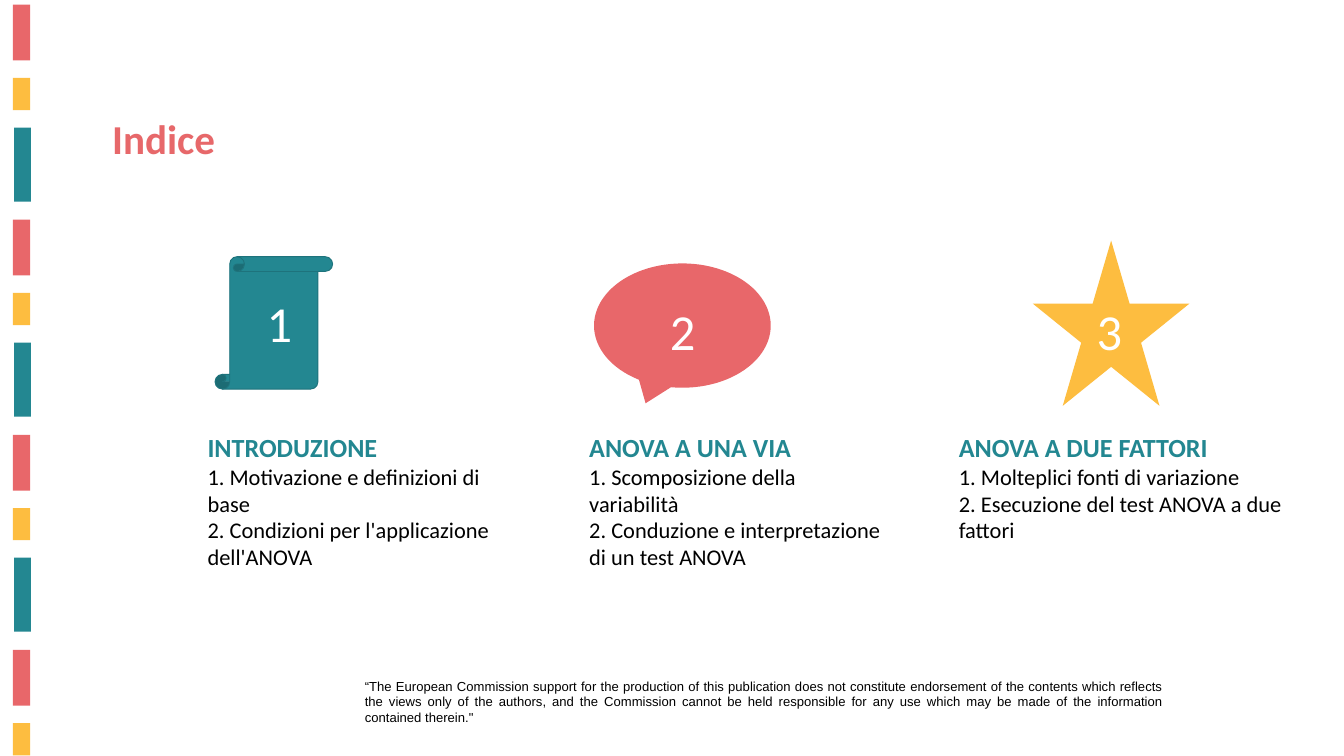
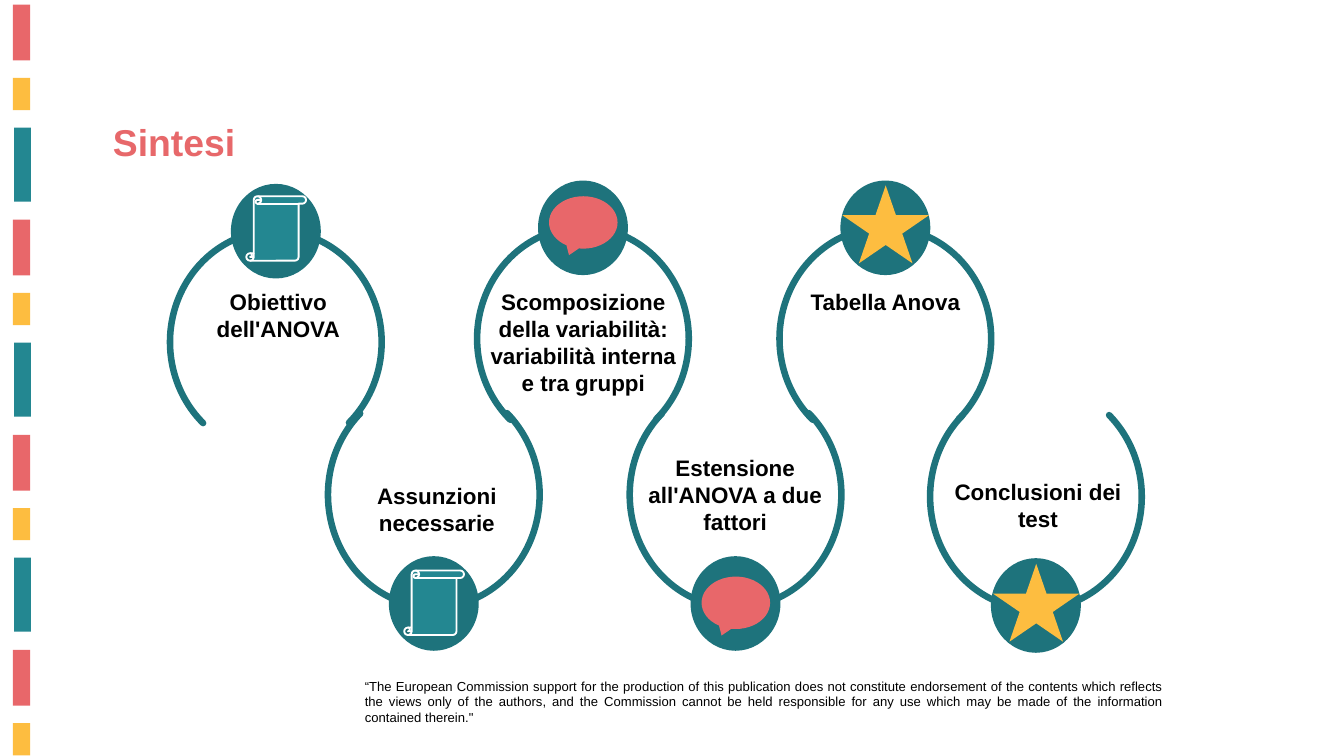
"""Builds the index and summary slides of an ANOVA lesson."""
from pptx import Presentation
from pptx.dml.color import RGBColor
from pptx.enum import shapes, text
from pptx.oxml import ns
from pptx.util import Inches, Pt

COLORS = {"coral": "E8676A", "title": "E7686A", "amber": "FDBD40", "teal": "238791",
          "dark": "1E737C", "black": "000000", "white": "FFFFFF"}
SHAPE = shapes.MSO_SHAPE
ALIGN = text.PP_ALIGN

STRIPES = [("coral", 0.19, 0.07, 0.26, 0.83), ("amber", 0.19, 1.16, 0.26, 0.48),
           ("teal", 0.21, 1.9, 0.25, 1.1)]
STRIPE_PERIOD = 3.2
DISCLAIMER = ("“The European Commission support for the production of this publication does not "
              "constitute endorsement of the contents which reflects the views only of the authors, "
              "and the Commission cannot be held responsible for any use which may be made of the "
              "information contained therein.\"")

SECTIONS = [
    ("INTRODUZIONE", ["1. Motivazione e definizioni di base",
                      "2. Condizioni per l'applicazione dell'ANOVA"], (2.99, 6.37, 4.55, 2.89)),
    ("ANOVA A UNA VIA", ["1. Scomposizione della variabilità",
                         "2. Conduzione e interpretazione di un test ANOVA"],
     (8.67, 6.37, 4.55, 2.89)),
    ("ANOVA A DUE FATTORI", ["1. Molteplici fonti di variazione",
                             "2. Esecuzione del test ANOVA a due fattori"],
     (14.17, 6.37, 5.4, 2.02)),
]
BADGES = [
    (SHAPE.VERTICAL_SCROLL, (3.2, 3.82, 1.75, 1.97), "teal", "dark", (3.87, 4.3, 1.58, 1.01)),
    (SHAPE.OVAL_CALLOUT, (8.84, 3.92, 2.63, 1.85), "coral", None, (9.87, 4.41, 1.08, 1.01)),
    (SHAPE.STAR_5_POINT, (15.37, 3.58, 2.33, 2.46), "amber", None, (16.22, 4.41, 1.5, 1.01)),
]

ICONS = {"scroll": (SHAPE.VERTICAL_SCROLL, 0.89, 0.96, "teal", "white"),
         "callout": (SHAPE.OVAL_CALLOUT, 1.02, 0.78, "coral", None),
         "star": (SHAPE.STAR_5_POINT, 1.29, 1.16, "amber", None)}
STEPS = [
    ("Obiettivo dell'ANOVA", (2.69, 4.24, 2.9, 0.91), 2.53, 3.43, "scroll", 2.92),
    ("Assunzioni necessarie", (4.96, 7.13, 3.08, 0.91), 4.88, 5.68, "scroll", 8.49),
    ("Scomposizione della variabilità: variabilità interna e tra gruppi",
     (7.14, 4.24, 3.08, 1.72), 7.1, 3.38, "callout", 2.92),
    ("Estensione all'ANOVA a due fattori", (9.49, 6.71, 2.9, 1.31), 9.37, 5.68, "callout", 8.58),
    ("Tabella Anova", (11.8, 4.24, 2.75, 0.5), 11.6, 3.38, "star", 2.76),
    ("Conclusioni dei test", (13.9, 7.07, 3.09, 0.91), 13.84, 5.71, "star", 8.39),
]


class Deck:
    """Holds the presentation, its style and the current slide."""

    def __init__(self):
        self.prs = Presentation()
        self.prs.slide_width, self.prs.slide_height = Inches(20), Inches(11.25)
        self.layout = self.prs.slide_layouts[5]
        for ph in list(self.layout.placeholders)[1:]:
            ph._element.getparent().remove(ph._element)
        self.s = None

    def slide(self, title, box, size, font):
        self.s = self.prs.slides.add_slide(self.layout)
        sp = self.s.shapes.title
        sp.left, sp.top, sp.width, sp.height = map(Inches, box)
        self.set_lines(sp, [(title, size, "title", True)], font)

    def set_lines(self, sp, lines, font, align=ALIGN.LEFT):
        tf = sp.text_frame
        tf.word_wrap = True
        tf.auto_size = text.MSO_AUTO_SIZE.NONE
        tf.vertical_anchor = text.MSO_ANCHOR.TOP
        for i, (line, size, color, bold) in enumerate(lines):
            p = tf.add_paragraph() if i else tf.paragraphs[0]
            p.text, p.alignment = line, align
            p.font.name, p.font.size, p.font.bold = font, Pt(size), bold
            p.font.color.rgb = RGBColor.from_string(COLORS[color])

    def text(self, box, lines, font, align=ALIGN.LEFT):
        sp = self.s.shapes.add_textbox(*map(Inches, box))
        self.set_lines(sp, lines, font, align)
        return sp

    def shape(self, kind, box, fill=None, line=None, width=1):
        sp = self.s.shapes.add_shape(kind, *map(Inches, box))
        sp.shadow.inherit = False
        if fill:
            sp.fill.solid()
            sp.fill.fore_color.rgb = RGBColor.from_string(COLORS[fill])
        else:
            sp.fill.background()
        if line:
            sp.line.color.rgb = RGBColor.from_string(COLORS[line])
            sp.line.width = Pt(width)
        else:
            sp.line.fill.background()
        return sp

    def arc(self, box, flipped):
        sp = self.shape(SHAPE.ARC, box, line="dark", width=7)
        sp.adjustments[0], sp.adjustments[1] = 79.14, 28.68
        sp.rotation = 180 if flipped else 0
        sp._element.spPr.find(ns.qn("a:ln")).set("cap", "rnd")

    def icon(self, name, center, top):
        kind, w, h, fill, line = ICONS[name]
        self.shape(kind, (center - w / 2, top, w, h), fill, line, 2)

    def share_frame(self):
        """Moves the stripes and the disclaimer to the layout."""
        frame = [self.shape(SHAPE.RECTANGLE, (x, y + n * STRIPE_PERIOD, w, h), color)
                 for n in range(4) for color, x, y, w, h in STRIPES
                 if y + n * STRIPE_PERIOD < 11.25]
        frame.append(self.text((5.33, 10.04, 12.08, 0.81), [(DISCLAIMER, 14, "black", False)],
                               "Arial", ALIGN.JUSTIFY))
        for sp in frame:
            self.layout.shapes._spTree.append(sp._element)


def index_slide(deck):
    deck.slide("Indice", (1.57, 1.64, 6.77, 1.51), 44, "Calibri")
    deck.share_frame()
    for n, (section, badge) in enumerate(zip(SECTIONS, BADGES), 1):
        heading, topics, box = section
        kind, badge_box, fill, line, number_box = badge
        deck.text(box, [(heading, 28, "teal", True)]
                  + [(topic, 24, "black", False) for topic in topics], "Calibri")
        deck.shape(kind, badge_box, fill, line)
        deck.text(number_box, [(str(n), 54, "white", False)], "Calibri")


def summary_slide(deck):
    deck.slide("Sintesi", (1.58, 1.72, 6.58, 0.77), 40, "Arial")
    for i, (label, box, x, y, icon, icon_top) in enumerate(STEPS):
        lower = i % 2 == 1
        deck.arc((x, y, 3.15, 3.36 if lower else 3.32), lower)
        deck.shape(SHAPE.OVAL, (x + 0.92, y + (2.61 if lower else -0.68), 1.31, 1.38),
                   "dark", "dark", 2)
        deck.icon(icon, x + 1.58, icon_top)
        deck.text(box, [(label, 24, "black", True)], "Arial", ALIGN.CENTER)


def main():
    deck = Deck()
    index_slide(deck)
    summary_slide(deck)
    deck.prs.save("out.pptx")


if __name__ == "__main__":
    main()
